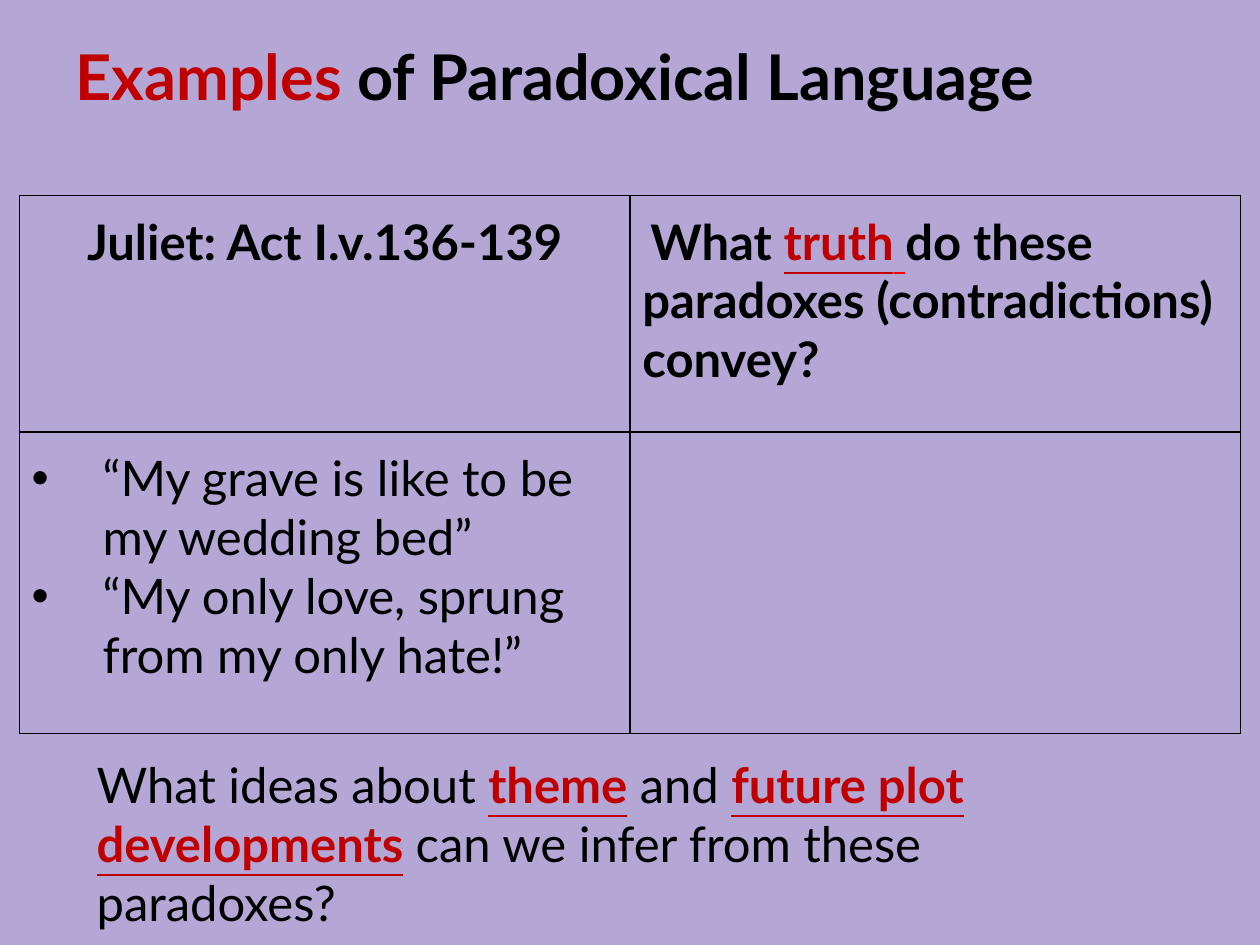
from pptx import Presentation
from pptx.dml.color import RGBColor
from pptx.enum import text
from pptx.oxml import parse_xml
from pptx.oxml.ns import nsdecls
from pptx.util import Cm, Pt

LILAC = RGBColor(0xB4, 0xA7, 0xD6)
BLACK = RGBColor(0, 0, 0)
CRIMSON = RGBColor(0xC0, 0, 0)
RED = RGBColor(0xFF, 0, 0)
FONT = "Lato"
INSET = Cm(0.25)


def add_run(p, words, size=28, color=BLACK, bold=False, underline=False):
    r = p.add_run()
    r.text = words
    f = r.font
    f.name, f.size, f.bold, f.underline = FONT, Pt(size), bold, underline
    f.color.rgb = color


def add_key(p, words):
    add_run(p, words, color=CRIMSON, bold=True, underline=True)


def add_bullet(p, indent):
    pPr = p._p.get_or_add_pPr()
    pPr.set("marL", str(indent))
    pPr.set("indent", str(-indent))
    pPr.append(parse_xml(f'<a:buFont {nsdecls("a")} typeface="Arial"/>'))
    pPr.append(parse_xml(f'<a:buChar {nsdecls("a")} char="•"/>'))


def add_border(cell):
    tcPr = cell._tc.get_or_add_tcPr()
    for i, side in enumerate(("lnL", "lnR", "lnT", "lnB")):
        tcPr.insert(i, parse_xml(
            f'<a:{side} {nsdecls("a")} w="{Pt(0.75)}"><a:solidFill>'
            f'<a:srgbClr val="{BLACK}"/></a:solidFill></a:{side}>'))


def add_box(s, left, top, width, height, anchor):
    tf = s.shapes.add_textbox(left, top, width, height).text_frame
    tf.word_wrap = True
    tf.vertical_anchor = anchor
    tf.margin_left = tf.margin_right = tf.margin_top = tf.margin_bottom = INSET
    return tf.paragraphs[0]


def add_title(s, left, top, width, height):
    p = add_box(s, left, top, width, height, text.MSO_ANCHOR.BOTTOM)
    add_run(p, "Examples ", 36, CRIMSON, bold=True)
    add_run(p, "of Paradoxical Language", 36, bold=True)


def add_quote_table(s, left, top, width, height):
    table = s.shapes.add_table(2, 2, left, top, width, height).table
    table.first_row = table.horz_banding = False
    table.rows[0].height = int(height * 0.44)
    table.rows[1].height = height - table.rows[0].height
    for cell in table.iter_cells():
        cell.fill.background()
        cell.margin_left = cell.margin_right = INSET
        cell.margin_top = cell.margin_bottom = Cm(0.33)
        add_border(cell)

    # Headings
    p = table.cell(0, 0).text_frame.paragraphs[0]
    p.alignment = text.PP_ALIGN.CENTER
    add_run(p, "Juliet: Act I.v.136-139", bold=True)
    p = table.cell(0, 1).text_frame.paragraphs[0]
    add_run(p, " ", 18)
    add_run(p, "What ", bold=True)
    add_key(p, "truth")
    add_run(p, " ", color=RED, bold=True, underline=True)
    add_run(p, "do these paradoxes (contradictions) convey?", bold=True)

    # Quotations
    tf = table.cell(1, 0).text_frame
    tf.text = "\n"
    quotes = ("“My grave is like to be my wedding bed”",
              "“My only love, sprung from my only hate!”")
    for p, quote in zip(tf.paragraphs, quotes):
        add_bullet(p, Cm(1.43))
        add_run(p, quote)


def add_question(s, left, top, width, height):
    p = add_box(s, left, top, width, height, text.MSO_ANCHOR.TOP)
    add_run(p, "What ideas about ")
    add_key(p, "theme")
    add_run(p, " and ")
    add_key(p, "future plot developments")
    add_run(p, " can we infer from these paradoxes?")


def main():
    prs = Presentation()
    prs.slide_width, prs.slide_height = Cm(25.4), Cm(19.05)
    s = prs.slides.add_slide(prs.slide_layouts[6])
    s.background.fill.solid()
    s.background.fill.fore_color.rgb = LILAC
    add_title(s, Cm(1.27), Cm(-0.64), Cm(22.86), Cm(3.18))
    add_quote_table(s, Cm(0.39), Cm(3.94), Cm(24.62), Cm(10.84))
    add_question(s, Cm(1.7), Cm(14.96), Cm(21.6), Cm(3.53))
    prs.save("out.pptx")


if __name__ == "__main__":
    main()
